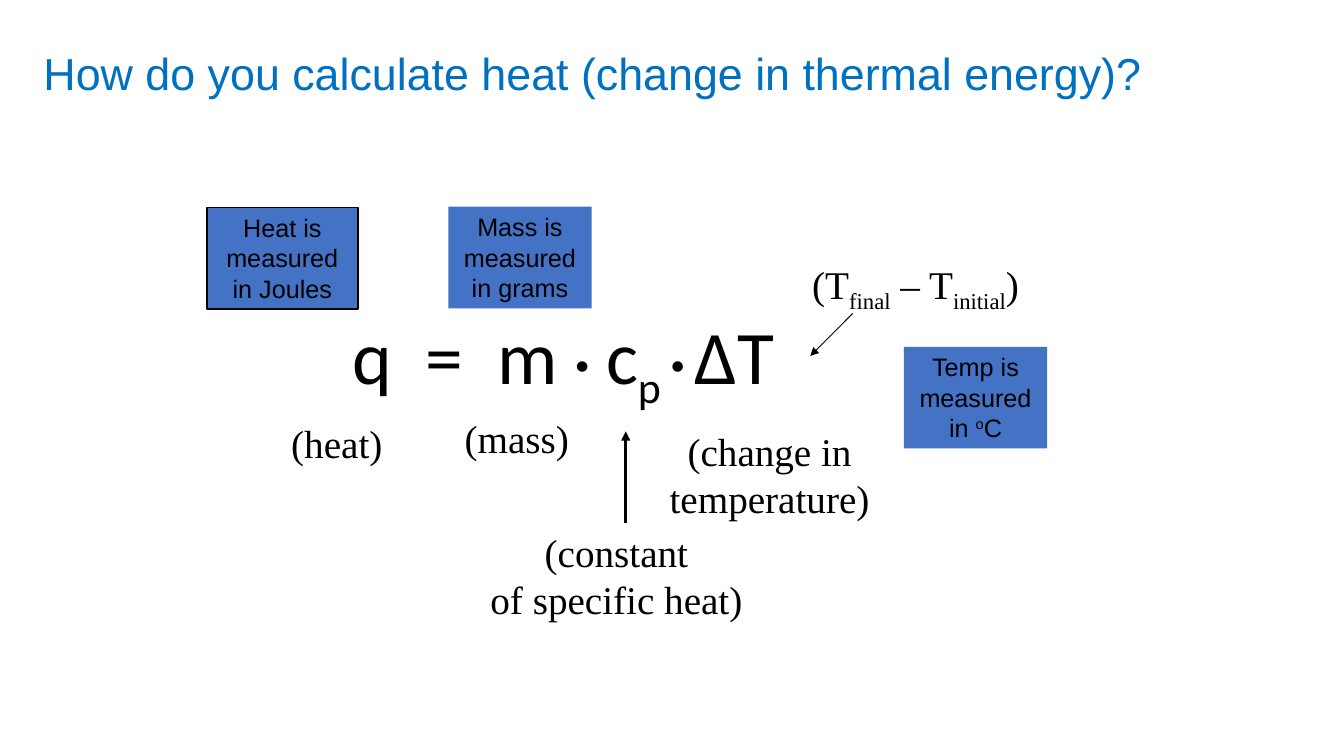
from pptx import Presentation
from pptx.dml.color import RGBColor
from pptx.enum.shapes import MSO_CONNECTOR as Connector, MSO_SHAPE as Preset
from pptx.enum.text import MSO_ANCHOR as Anchor, MSO_AUTO_SIZE as AutoSize, PP_ALIGN as Align
from pptx.oxml.ns import qn
from pptx.util import Cm, Pt
from lxml.etree import SubElement

COLORS = {"title": "0070C0", "ink": "000000", "unit": "4472C4"}


def color(name):
    """Return the named colour."""
    return RGBColor.from_string(COLORS[name])


def add_span(para, text, font, size, ink="ink", baseline=0):
    """Append a run, raised or lowered by baseline percent."""
    span = para.add_run()
    span.text = text
    span.font.name = font
    span.font.size = Pt(size)
    span.font.color.rgb = color(ink)
    if baseline:
        span.font._element.set("baseline", str(baseline * 1000))


def write(box, text, font="Times New Roman", size=28, ink="ink", align=Align.LEFT,
          wrap=True, anchor=Anchor.TOP, grow=True):
    """Fill a shape with lines, each a string or a list of (text, baseline, size) spans."""
    frame = box.text_frame
    frame.word_wrap = wrap
    frame.vertical_anchor = anchor
    frame.auto_size = AutoSize.SHAPE_TO_FIT_TEXT if grow else AutoSize.NONE
    for index, line in enumerate(text):
        para = frame.add_paragraph() if index else frame.paragraphs[0]
        para.alignment = align
        for words, baseline, *own_size in [(line, 0)] if isinstance(line, str) else line:
            add_span(para, words, font, own_size[0] if own_size else size, ink, baseline)


def add_title(page, text):
    """Place and format the slide title."""
    title = page.shapes.title
    title.left, title.top, title.width, title.height = Cm(0.84), Cm(1.02), Cm(29.97), Cm(1.63)
    write(title, [text], font="Arial", size=32, ink="title")


def add_label(page, left, top, width, height, text, **style):
    """Add a text box."""
    box = page.shapes.add_textbox(Cm(left), Cm(top), Cm(width), Cm(height))
    write(box, text, **style)
    return box


def add_equation(page, spans):
    """Add the formula with its hanging indent and tight lines."""
    box = add_label(page, 3.71, 7.7, 20.96, 2.54, [spans], font="Calibri", size=54,
                    align=Align.CENTER, grow=False)
    para = box.text_frame.paragraphs[0]
    para.line_spacing = 0.9
    para.space_before = Pt(10)
    properties = para._p.get_or_add_pPr()
    properties.set("marL", str(Cm(0.64)))
    properties.set("indent", str(-Cm(0.64)))


def add_unit(page, left, top, width, text, outlined=False):
    """Add a filled box that names a unit."""
    box = page.shapes.add_shape(Preset.RECTANGLE, Cm(left), Cm(top), Cm(width), Cm(2.56))
    box.shadow.inherit = False
    box.fill.solid()
    box.fill.fore_color.rgb = color("unit")
    if outlined:
        box.line.color.rgb = color("ink")
        box.line.width = Pt(1.25)
    else:
        box.line.fill.background()
    write(box, [text], font="Arial", size=18, align=Align.CENTER)


def add_arrow(page, start, end, weight):
    """Add a straight arrow with its head at the end."""
    arrow = page.shapes.add_connector(Connector.STRAIGHT, *map(Cm, start + end))
    arrow.line.color.rgb = color("ink")
    arrow.line.width = Pt(weight)
    SubElement(arrow.line._get_or_add_ln(), qn("a:tailEnd"), type="triangle")
    SubElement(arrow._element.spPr, qn("a:effectLst"))


def main():
    """Build and save the deck."""
    deck = Presentation()
    deck.slide_width, deck.slide_height = Cm(33.87), Cm(19.05)
    page = deck.slides.add_slide(deck.slide_layouts[5])

    add_title(page, "How do you calculate heat (change in thermal energy)?")
    add_equation(page, [("q  =  m ", 0), ("●", 30, 28), (" c", 0), ("p ", -25),
                        ("●", 30, 28), (" ", -25), ("ΔT", 0)])

    add_label(page, 7.09, 10.44, 2.84, 1.45, ["(heat)"], wrap=False)
    add_label(page, 11.46, 10.31, 3.28, 1.45, ["(mass)"], wrap=False)
    add_label(page, 12.07, 13.18, 6.93, 2.64, ["(constant", "of specific heat)"],
              align=Align.CENTER, wrap=False)
    add_label(page, 16.59, 10.64, 5.61, 2.64, ["(change in", "temperature)"],
              align=Align.CENTER, wrap=False)
    add_label(page, 20.22, 6.43, 7.19, 1.45,
              [[("(T", 0), ("final", -25), (" – T", 0), ("initial", -25), (")", 0)]])

    add_arrow(page, (15.77, 13.18), (15.77, 10.87), 2.25)
    add_arrow(page, (21.49, 7.9), (20.42, 8.97), 0.75)

    add_unit(page, 5.21, 5.23, 3.81, "Heat is measured in Joules", outlined=True)
    add_unit(page, 11.3, 5.21, 3.61, "Mass is measured in grams")
    add_unit(page, 22.78, 8.74, 3.61, [("Temp is measured in ", 0), ("o", 30), ("C", 0)])

    deck.save("out.pptx")


if __name__ == "__main__":
    main()
